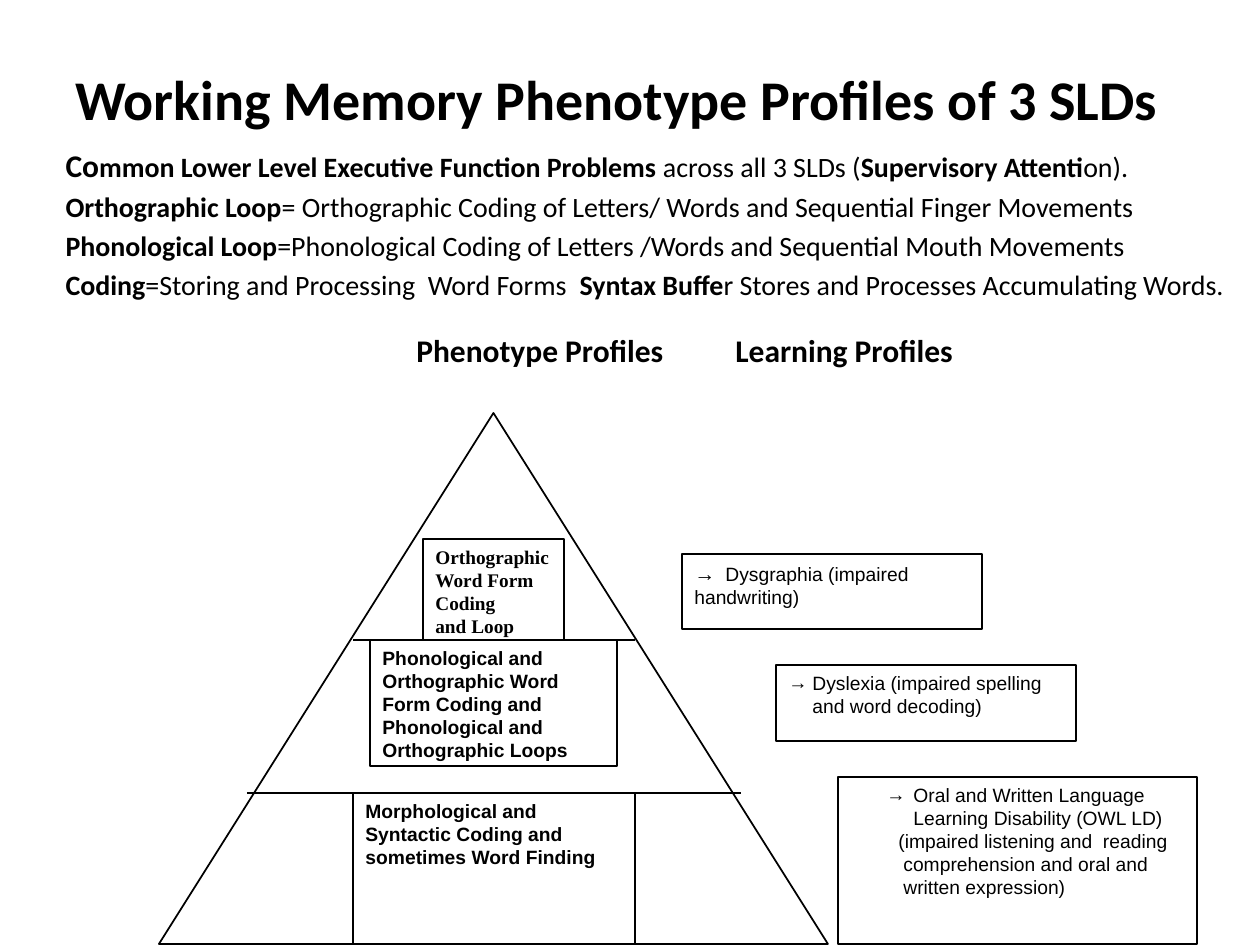
"""Build the slide on working memory phenotype profiles of three SLDs."""
from lxml import etree
from pptx import Presentation
from pptx import util as u
from pptx.dml.color import RGBColor
from pptx.enum import shapes, text
from pptx.oxml.ns import qn

EMU_PER_PX = 914400 / 126
BLACK, WHITE = "000000", "FFFFFF"
SANS, SERIF, HEADING = "Arial", "Times New Roman", "Calibri"


def px(length):
    return u.Emu(round(length * EMU_PER_PX))


def color(hex_value):
    return RGBColor.from_string(hex_value)


def place(item, left, top, width, height):
    item.left, item.top, item.width, item.height = map(px, (left, top, width, height))


def add_run(paragraph, words, size, face, bold=False):
    run = paragraph.add_run()
    run.text = words
    run.font.size, run.font.name, run.font.bold = u.Pt(size), face, bold
    run.font.color.rgb = color(BLACK)


def indent(paragraph, margin, hanging=0, bullet=None):
    properties = paragraph._p.get_or_add_pPr()
    properties.set("marL", str(px(margin)))
    properties.set("indent", str(px(-hanging)))
    if bullet:
        etree.SubElement(properties, qn("a:buFont"), typeface=SERIF)
        etree.SubElement(properties, qn("a:buChar"), char=bullet)
    else:
        etree.SubElement(properties, qn("a:buNone"))


def add_tab(paragraph, position):
    tabs = etree.SubElement(paragraph._p.get_or_add_pPr(), qn("a:tabLst"))
    etree.SubElement(tabs, qn("a:tab"), pos=str(px(position)), algn="l")


def paragraphs(frame, count):
    return [frame.paragraphs[0]] + [frame.add_paragraph() for _ in range(count - 1)]


def add_outline(slide, preset, box, width=0.75):
    outline = slide.shapes.add_shape(preset, *map(px, box))
    outline.shadow.inherit = False
    outline.fill.solid()
    outline.fill.fore_color.rgb = color(WHITE)
    outline.line.color.rgb = color(BLACK)
    outline.line.width = u.Pt(width)
    return outline


def add_panel(slide, box):
    frame = add_outline(slide, shapes.MSO_SHAPE.RECTANGLE, box).text_frame
    frame.word_wrap = True
    frame.vertical_anchor = text.MSO_ANCHOR.TOP
    return frame


def add_panel_lines(frame, lines, face=SANS, bold=False):
    added = paragraphs(frame, len(lines))
    for paragraph, line in zip(added, lines):
        paragraph.alignment = text.PP_ALIGN.LEFT
        add_run(paragraph, line, 11, face, bold)
    return added


def add_divider(slide, start, end, y):
    divider = slide.shapes.add_connector(
        shapes.MSO_CONNECTOR.STRAIGHT, px(start), px(y), px(end), px(y))
    divider.line.color.rgb = color(BLACK)
    divider.line.width = u.Pt(0.75)
    etree.SubElement(divider._element.spPr, qn("a:effectLst"))


def add_column_heading(slide, words, left):
    heading = slide.shapes.add_textbox(px(left), px(325), px(290), px(50))
    heading.text_frame.word_wrap = True
    add_run(heading.text_frame.paragraphs[0], words, 18, HEADING, True)


def fill_title(title):
    place(title, 55, 38, 1124, 120)
    title.fill.solid()
    title.fill.fore_color.rgb = color(WHITE)
    title.text_frame.vertical_anchor = text.MSO_ANCHOR.MIDDLE
    headline = title.text_frame.paragraphs[0]
    headline.alignment = text.PP_ALIGN.CENTER
    add_run(headline, "Working Memory Phenotype Profiles of 3 SLDs", 32, HEADING, True)


def fill_definitions(body):
    place(body, 53, 140, 1197, 704)
    definitions = [
        [("Co", True, 18), ("mmon Lower Level Executive Function Problems ", True, 16),
         ("across all 3 SLDs (", False, 16), ("Supervisory Attenti", True, 16),
         ("on).", False, 16)],
        [("Orthographic Loop", True, 16),
         ("= Orthographic Coding of Letters/ Words and Sequential Finger Movements", False, 16)],
        [("Phonological Loop", True, 16),
         ("=Phonological Coding of Letters /Words and Sequential Mouth Movements", False, 16)],
        [("Coding", True, 16), ("=Storing and Processing  Word Forms  ", False, 16),
         ("Syntax Buffe", True, 16),
         ("r Stores and Processes Accumulating Words.", False, 16)],
    ]
    added = paragraphs(body.text_frame, len(definitions))
    for number, (paragraph, parts) in enumerate(zip(added, definitions)):
        indent(paragraph, 48, 48)
        paragraph.space_before = u.Pt(3 if number else 0)
        for words, bold, size in parts:
            add_run(paragraph, words, size, HEADING, bold)


def add_pyramid(slide):
    add_outline(slide, shapes.MSO_SHAPE.ISOSCELES_TRIANGLE, (159, 413, 669, 531), 1)
    add_divider(slide, 247, 741, 793)
    add_divider(slide, 353, 635, 640)
    levels = [
        ((353, 793, 282, 151), SANS,
         ["Morphological and Syntactic Coding and sometimes Word Finding"]),
        ((370, 640, 247, 126), SANS,
         ["Phonological and", "Orthographic Word Form Coding and",
          "Phonological and Orthographic Loops"]),
        ((423, 539, 141, 101), SERIF,
         ["Orthographic", "Word Form Coding", "and Loop"]),
    ]
    for box, face, lines in levels:
        add_panel_lines(add_panel(slide, box), lines, face, True)


def add_learning_profiles(slide):
    dysgraphia = add_panel(slide, (682, 554, 300, 75)).paragraphs[0]
    dysgraphia.alignment = text.PP_ALIGN.LEFT
    add_tab(dysgraphia, 31)
    add_run(dysgraphia, "→\t", 12, SERIF)
    add_run(dysgraphia, "Dysgraphia (impaired handwriting)", 11, SANS)

    dyslexia = add_panel_lines(
        add_panel(slide, (776, 665, 300, 76)),
        ["Dyslexia (impaired spelling and word decoding)"])
    indent(dyslexia[0], 24, 24, "→")

    language = add_panel_lines(
        add_panel(slide, (838, 777, 359, 167)),
        ["Oral and Written Language Learning Disability (OWL LD)",
         "(impaired listening and  reading",
         "comprehension and oral and", "written expression)"])
    indent(language[0], 63, 27, "→")
    for paragraph, margin in zip(language[1:], (48, 53, 53)):
        indent(paragraph, margin)


def main():
    deck = Presentation()
    deck.slide_width, deck.slide_height = px(1260), px(945)
    slide = deck.slides.add_slide(deck.slide_layouts[1])
    fill_title(slide.shapes.title)
    fill_definitions(slide.placeholders[1])
    add_column_heading(slide, "Phenotype Profiles", 404)
    add_column_heading(slide, "Learning Profiles", 723)
    add_pyramid(slide)
    add_learning_profiles(slide)
    deck.save("out.pptx")


if __name__ == "__main__":
    main()
